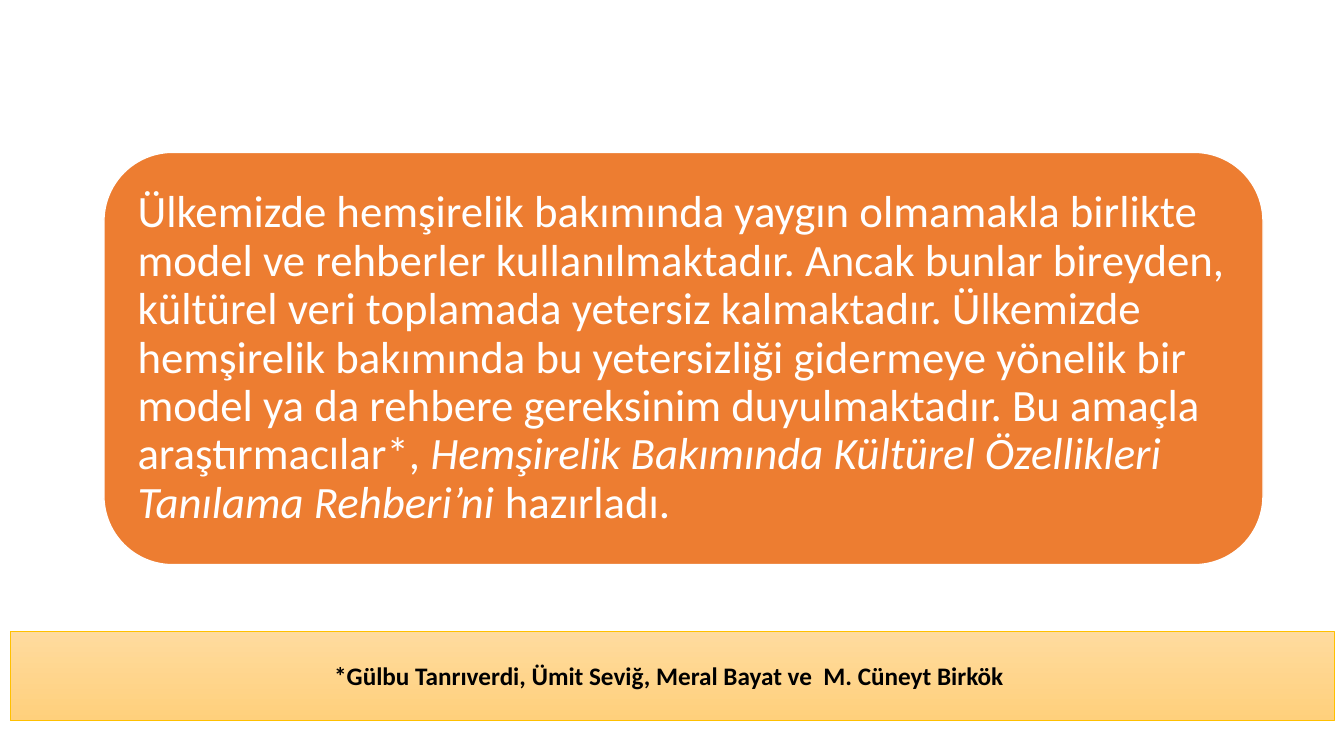
from pptx import Presentation
from pptx.dml.color import RGBColor
from pptx.enum.shapes import MSO_SHAPE as Shape
from pptx.enum.text import MSO_ANCHOR as Anchor, PP_ALIGN as Align
from pptx.util import Cm, Pt

# Content: runs of (text, italic)
STATEMENT = [
    ("Ülkemizde hemşirelik bakımında yaygın olmamakla birlikte model ve "
     "rehberler kullanılmaktadır. Ancak bunlar bireyden, kültürel veri "
     "toplamada yetersiz kalmaktadır. Ülkemizde hemşirelik bakımında bu "
     "yetersizliği gidermeye yönelik bir model ya da rehbere gereksinim "
     "duyulmaktadır. Bu amaçla araştırmacılar*, ", False),
    ("Hemşirelik Bakımında Kültürel Özellikleri Tanılama Rehberi’ni ", True),
    ("hazırladı.", False),
]
RESEARCHERS = [
    ("*Gülbu Tanrıverdi, Ümit Seviğ, Meral Bayat ve  M. Cüneyt Birkök ", False),
]

# Style
FONT = "Calibri"
WHITE = RGBColor(0xFF, 0xFF, 0xFF)
BLACK = RGBColor(0x00, 0x00, 0x00)
ORANGE = RGBColor(0xED, 0x7D, 0x31)
GOLD = RGBColor(0xFF, 0xC0, 0x00)
BAND_TOP = RGBColor(0xFF, 0xDB, 0x9E)
BAND_BOTTOM = RGBColor(0xFF, 0xD0, 0x7C)

SLIDE_WIDTH, SLIDE_HEIGHT = Cm(33.87), Cm(19.05)
BAND_MARGIN = Cm(0.25)


def add_panel(slide, kind, box, border, border_width):
    panel = slide.shapes.add_shape(kind, *box)
    panel.shadow.inherit = False
    panel.line.color.rgb = border
    panel.line.width = Pt(border_width)
    return panel


def write(panel, runs, size, color, align, bold=False):
    frame = panel.text_frame
    frame.word_wrap = True
    frame.vertical_anchor = Anchor.MIDDLE
    paragraph = frame.paragraphs[0]
    paragraph.alignment = align
    font = paragraph.font
    font.name, font.size, font.bold = FONT, Pt(size), bold
    font.color.rgb = color
    for text, italic in runs:
        run = paragraph.add_run()
        run.text = text
        run.font.italic = italic
    return frame


def main():
    deck = Presentation()
    deck.slide_width, deck.slide_height = SLIDE_WIDTH, SLIDE_HEIGHT
    slide = deck.slides.add_slide(deck.slide_layouts[6])

    # Statement panel
    statement = add_panel(slide, Shape.ROUNDED_RECTANGLE,
                          (Cm(2.62), Cm(3.84), Cm(29.21), Cm(10.39)), WHITE, 1)
    statement.fill.solid()
    statement.fill.fore_color.rgb = ORANGE
    frame = write(statement, STATEMENT, 32, WHITE, Align.LEFT)
    frame.margin_left = frame.margin_right = Cm(0.34)
    frame.margin_top = frame.margin_bottom = Cm(0.34)
    frame.paragraphs[0].line_spacing = 0.9

    # Researchers band
    band = add_panel(slide, Shape.RECTANGLE,
                     (BAND_MARGIN, Cm(15.9), SLIDE_WIDTH - 2 * BAND_MARGIN, Cm(2.26)),
                     GOLD, 0.5)
    band.fill.gradient()
    band.fill.gradient_angle = 270
    for stop, color in zip(band.fill.gradient_stops, (BAND_TOP, BAND_BOTTOM)):
        stop.color.rgb = color
    write(band, RESEARCHERS, 18, BLACK, Align.CENTER, bold=True)

    deck.save("out.pptx")


if __name__ == "__main__":
    main()
